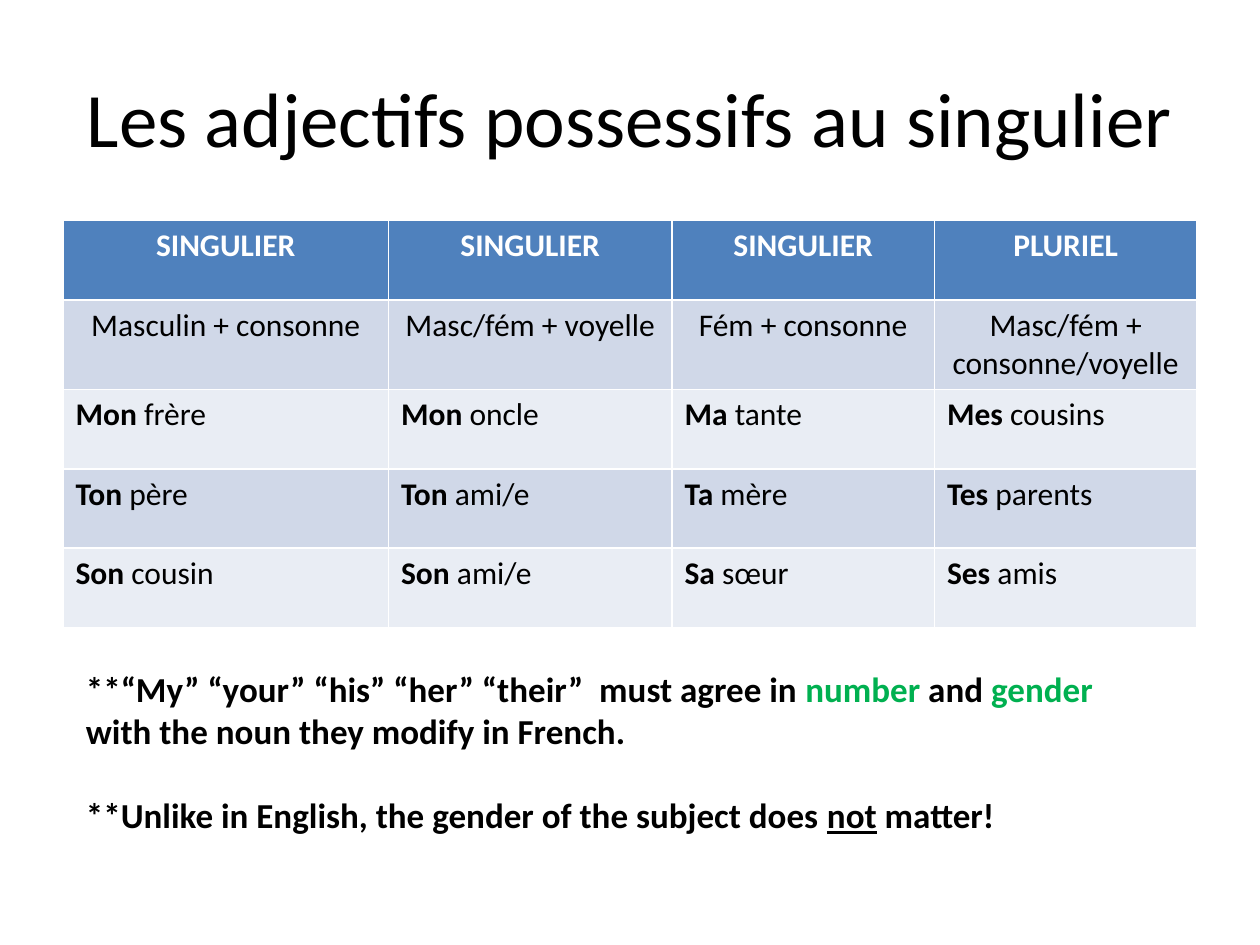
import pptx
import pptx.dml.color
import pptx.enum.text
import pptx.util

UNIT = pptx.util.Inches(1) / 12
SLIDE_GRID = (120, 90)
TITLE_BOX = (6, 3.6, 108, 15)
TABLE_BOX = (6, 21, 108, 37.8)
RULES_BOX = (7, 63, 103, 17.4)
COLUMN_SHARES = (31, 27, 25, 25)

BLACK, WHITE, GREEN = "000000", "FFFFFF", "00B050"
HEADER_FILL, BANDS = "4F81BD", ("D0D8E8", "E9EDF4")
CENTER = pptx.enum.text.PP_ALIGN.CENTER

HEADINGS = ("SINGULIER", "SINGULIER", "SINGULIER", "PLURIEL")
CONTEXTS = ("Masculin + consonne", "Masc/fém + voyelle",
            "Fém + consonne", "Masc/fém + consonne/voyelle")
EXAMPLES = (
    ("Mon frère", "Mon oncle", "Ma tante", "Mes cousins"),
    ("Ton père", "Ton ami/e", "Ta mère", "Tes parents"),
    ("Son cousin", "Son ami/e", "Sa sœur", "Ses amis"),
)
RULES = (
    (("**“My” “your” “his” “her” “their”  must agree in ", {}),
     ("number", {"color": GREEN}), (" and ", {}),
     ("gender", {"color": GREEN}),
     (" with the noun they modify in French.", {})),
    (("**Unlike in English, the gender of the subject does ", {}),
     ("not", {"underline": True}), (" matter!", {})),
)


def emu(cells):
    """Convert grid cells to a length."""
    return pptx.util.Emu(round(cells * UNIT))


def paint(target, color):
    """Give a fill or font colour its hex value."""
    target.rgb = pptx.dml.color.RGBColor.from_string(color)


def add_run(paragraph, text, color=BLACK, **formats):
    """Append a run with the given font values."""
    run = paragraph.add_run()
    run.text = text
    for name, value in {"name": "Calibri", **formats}.items():
        setattr(run.font, name, value)
    paint(run.font.color, color)


def add_title(slide, box):
    """Place the slide heading in its placeholder."""
    heading = slide.shapes.title
    for side, cells in zip(("left", "top", "width", "height"), box):
        setattr(heading, side, emu(cells))
    add_run(heading.text_frame.paragraphs[0],
            "Les adjectifs possessifs au singulier", size=pptx.util.Pt(44))


def fill_cell(cell, fill, pieces, alignment=None):
    """Colour a table cell and write its pieces of text."""
    cell.fill.solid()
    paint(cell.fill.fore_color, fill)
    paragraph = cell.text_frame.paragraphs[0]
    paragraph.alignment = alignment
    for text, color, bold in pieces:
        add_run(paragraph, text, color, size=pptx.util.Pt(18), bold=bold)


def add_possessives(slide, box):
    """Build the table of possessive adjectives."""
    row_count = 2 + len(EXAMPLES)
    table = slide.shapes.add_table(
        row_count, len(HEADINGS), *map(emu, box)).table
    for column, share in zip(table.columns, COLUMN_SHARES):
        column.width = emu(box[2] * share / sum(COLUMN_SHARES))
    for row in table.rows:
        row.height = emu(box[3] / row_count)
    for c, (heading, context) in enumerate(zip(HEADINGS, CONTEXTS)):
        fill_cell(table.cell(0, c), HEADER_FILL, [(heading, WHITE, True)], CENTER)
        fill_cell(table.cell(1, c), BANDS[0], [(context, BLACK, False)], CENTER)
    for r, examples in enumerate(EXAMPLES, 2):
        for c, example in enumerate(examples):
            possessive, noun = example.split(" ")
            fill_cell(table.cell(r, c), BANDS[(r - 1) % 2],
                      [(possessive + " ", BLACK, True), (noun, BLACK, False)])


def add_rules(slide, box):
    """Write the agreement rules below the table."""
    frame = slide.shapes.add_textbox(*map(emu, box)).text_frame
    frame.word_wrap = True
    for index, rule in enumerate(RULES):
        paragraph = frame.add_paragraph() if index else frame.paragraphs[0]
        paragraph.space_before = pptx.util.Pt(24 * index)
        for text, formats in rule:
            add_run(paragraph, text, size=pptx.util.Pt(20), bold=True, **formats)


def main():
    """Build and save the slide."""
    deck = pptx.Presentation()
    deck.slide_width, deck.slide_height = map(emu, SLIDE_GRID)
    slide = deck.slides.add_slide(deck.slide_layouts.get_by_name("Title Only"))
    add_title(slide, TITLE_BOX)
    add_possessives(slide, TABLE_BOX)
    add_rules(slide, RULES_BOX)
    deck.save("out.pptx")


if __name__ == "__main__":
    main()
